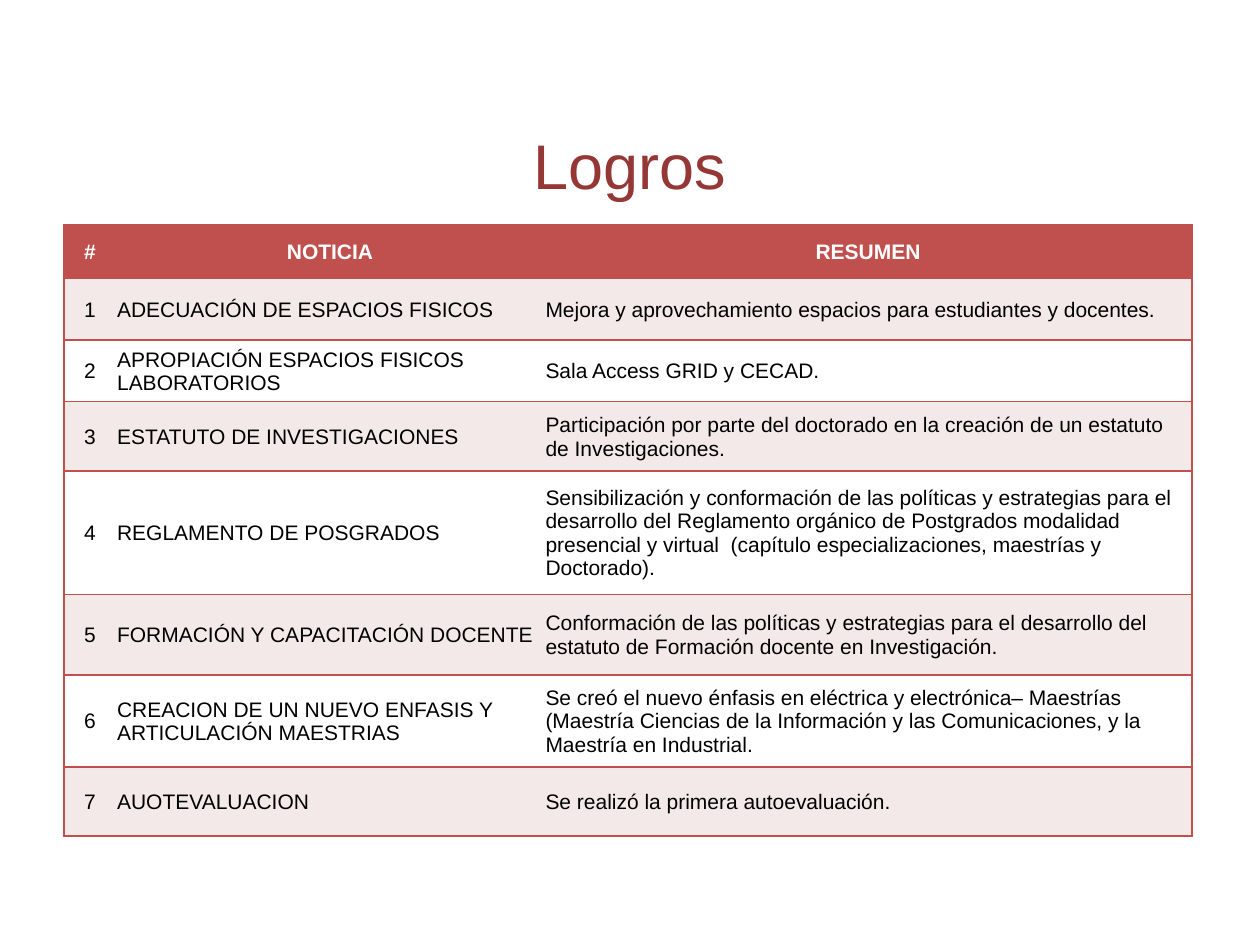
"""Builds the "Logros" slide: a title above a table of achievements."""
from dataclasses import dataclass

from lxml import etree
from pptx import Presentation, util as u
from pptx.dml.color import RGBColor
from pptx.enum import text
from pptx.oxml import ns


@dataclass(frozen=True)
class Theme:
    font: str = "Arial"
    title_size: int = 36
    cell_size: int = 12
    title: str = "953735"
    accent: str = "C0504D"
    header_ink: str = "FFFFFF"
    ink: str = "000000"
    bands: tuple = ("FFFFFF", "F4E9E9")
    line_width: int = 1


@dataclass(frozen=True)
class Entry:
    number: str
    news: str
    summary: str
    height: float


THEME = Theme()
WIDTH, HEIGHT = u.Inches(10), u.Inches(7.5)
COLUMNS = (4.1, 34, 51.4)
INSET = u.Inches(0.01)
ENTRIES = (
    Entry("#", "NOTICIA", "RESUMEN", 5.73),
    Entry("1", "ADECUACIÓN DE ESPACIOS FISICOS",
          "Mejora y aprovechamiento espacios para estudiantes y docentes.", 6.53),
    Entry("2", "APROPIACIÓN ESPACIOS FISICOS LABORATORIOS",
          "Sala Access GRID y CECAD.", 6.53),
    Entry("3", "ESTATUTO DE INVESTIGACIONES",
          "Participación por parte del doctorado en la creación de un estatuto "
          "de Investigaciones.", 7.33),
    Entry("4", "REGLAMENTO DE POSGRADOS",
          "Sensibilización y conformación de las políticas y estrategias para el "
          "desarrollo del Reglamento orgánico de Postgrados modalidad presencial y "
          "virtual  (capítulo especializaciones, maestrías y Doctorado).", 13.07),
    Entry("5", "FORMACIÓN Y CAPACITACIÓN DOCENTE",
          "Conformación de las políticas y estrategias para el desarrollo del "
          "estatuto de Formación docente en Investigación.", 8.53),
    Entry("6", "CREACION DE UN NUEVO ENFASIS Y ARTICULACIÓN MAESTRIAS",
          "Se creó el nuevo énfasis en eléctrica y electrónica– Maestrías (Maestría "
          "Ciencias de la Información y las Comunicaciones, y la Maestría en "
          "Industrial.", 9.73),
    Entry("7", "AUOTEVALUACION", "Se realizó la primera autoevaluación.", 7.33),
)


def across(percent: float) -> int:
    """Return a share of the slide's width."""
    return round(WIDTH * percent / 100)


def down(percent: float) -> int:
    """Return a share of the slide's height."""
    return round(HEIGHT * percent / 100)


def format_text(para, size: int, color: str, bold: bool, centred: bool) -> None:
    """Align a paragraph and format its runs."""
    para.alignment = text.PP_ALIGN.CENTER if centred else text.PP_ALIGN.LEFT
    for span in para.runs:
        span.font.name = THEME.font
        span.font.size = u.Pt(size)
        span.font.bold = bold
        span.font.color.rgb = RGBColor.from_string(color)


def draw_borders(cell, column: int) -> None:
    """Rule a cell above and below, and at the table's outer sides."""
    visible = {"L": column == 0, "R": column == len(COLUMNS) - 1, "T": True, "B": True}
    properties = cell._tc.get_or_add_tcPr()
    for position, (side, shown) in enumerate(visible.items()):
        line = etree.Element(ns.qn(f"a:ln{side}"), w=str(u.Pt(THEME.line_width)))
        fill = etree.SubElement(line, ns.qn("a:solidFill" if shown else "a:noFill"))
        if shown:
            etree.SubElement(fill, ns.qn("a:srgbClr"), val=THEME.accent)
        properties.insert(position, line)


def draw_cell(cell, words: str, row: int, column: int) -> None:
    """Fill, rule and write one table cell."""
    header = row == 0
    cell.fill.solid()
    cell.fill.fore_color.rgb = RGBColor.from_string(
        THEME.accent if header else THEME.bands[row % 2])
    draw_borders(cell, column)
    cell.vertical_anchor = text.MSO_ANCHOR.MIDDLE
    cell.margin_left = cell.margin_right = cell.margin_top = INSET
    cell.margin_bottom = 0
    para = cell.text_frame.paragraphs[0]
    para.text = words
    format_text(para, THEME.cell_size, THEME.header_ink if header else THEME.ink,
                header, header or column == 0)


def draw_title(page, words: str) -> None:
    """Place and format the slide title."""
    box = page.shapes.title
    box.left, box.top, box.width, box.height = across(5), down(9.07), across(90), down(16.67)
    box.text_frame.text = words
    box.text_frame.vertical_anchor = text.MSO_ANCHOR.MIDDLE
    format_text(box.text_frame.paragraphs[0], THEME.title_size, THEME.title, False, True)


def draw_table(page, entries: tuple[Entry, ...]) -> None:
    """Draw the table with one row per entry."""
    total = sum(entry.height for entry in entries)
    table = page.shapes.add_table(len(entries), len(COLUMNS), across(5.1), down(23.73),
                                  across(sum(COLUMNS)), down(total)).table
    for column, share in zip(table.columns, COLUMNS):
        column.width = across(share)
    for row, entry in enumerate(entries):
        table.rows[row].height = down(entry.height)
        for column, words in enumerate((entry.number, entry.news, entry.summary)):
            draw_cell(table.cell(row, column), words, row, column)


def main() -> None:
    """Build and save the deck."""
    deck = Presentation()
    deck.slide_width, deck.slide_height = WIDTH, HEIGHT
    page = deck.slides.add_slide(deck.slide_layouts[5])
    draw_title(page, "Logros")
    draw_table(page, ENTRIES)
    deck.save("out.pptx")


if __name__ == "__main__":
    main()
